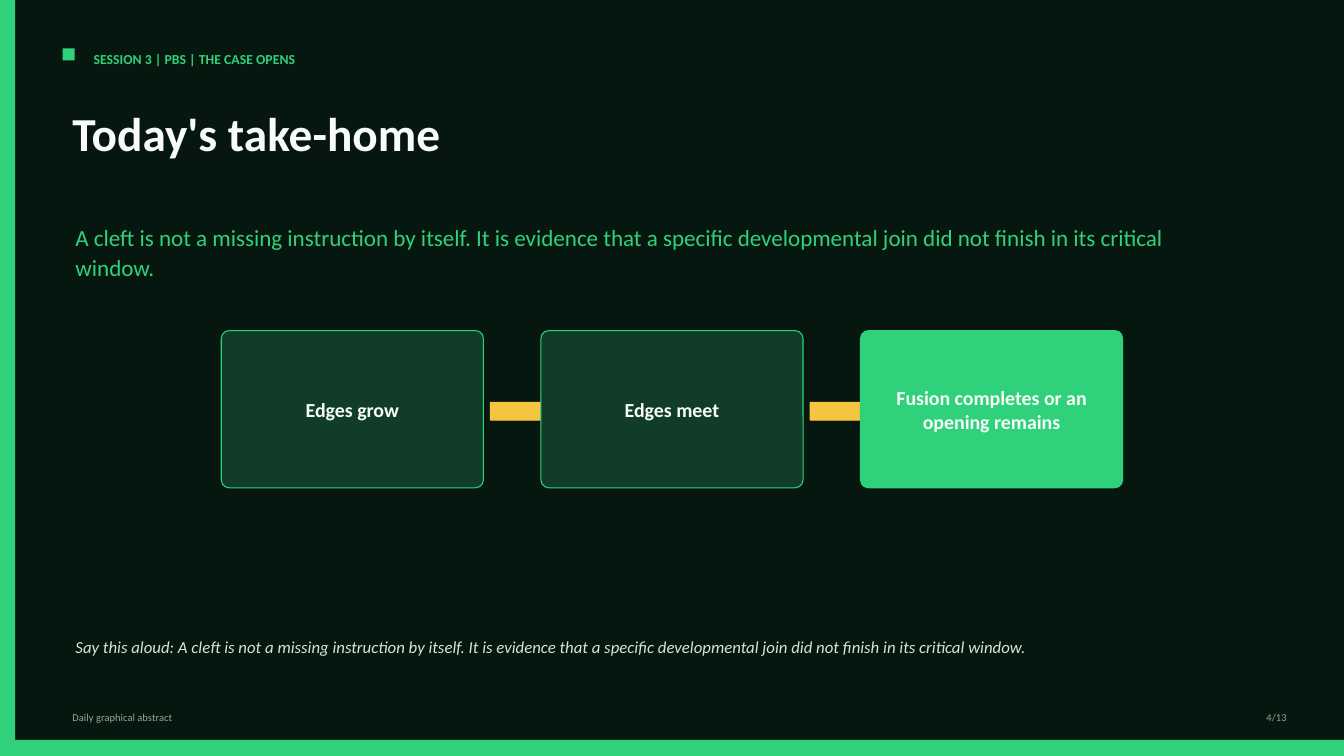
from dataclasses import dataclass

from pptx import Presentation
from pptx.dml.color import RGBColor
from pptx.enum.shapes import MSO_SHAPE as Shape
from pptx.enum.text import MSO_ANCHOR as Anchor, PP_ALIGN as Align
from pptx.util import Inches, Pt


@dataclass(frozen=True)
class Theme:
    """Colours, font and type sizes of the deck."""
    font: str = "Calibri"
    background: str = "06170F"
    accent: str = "2FD27A"
    card: str = "123C2A"
    arrow: str = "F5C542"
    bright: str = "F7FCF9"
    soft: str = "CDE9DA"
    muted: str = "87AB9A"
    title: float = 33.8
    lead: float = 16.5
    label: float = 14.2
    remark: float = 12
    kicker: float = 9.8
    footer: float = 7.5


class SlideBuilder:
    """Draws themed elements on one page."""

    def __init__(self, deck, theme):
        self.theme = theme
        self.page = deck.slides.add_slide(deck.slide_layouts[6])
        fill = self.page.background.fill
        fill.solid()
        fill.fore_color.rgb = RGBColor.from_string(theme.background)

    def set_text(self, frame, words, size, color, bold=False, italic=False,
                 align=Align.LEFT, spacing=None):
        """Put one styled paragraph into a text frame."""
        frame.word_wrap = True
        para = frame.paragraphs[0]
        para.text = words
        para.alignment = align
        if spacing:
            para.line_spacing = spacing
        font = para.font
        font.name, font.size = self.theme.font, Pt(size)
        font.bold, font.italic = bold, italic
        font.color.rgb = RGBColor.from_string(color)

    def text(self, left, top, width, height, words, size, color, **style):
        """Add a text box."""
        box = self.page.shapes.add_textbox(
            Inches(left), Inches(top), Inches(width), Inches(height))
        self.set_text(box.text_frame, words, size, color, **style)

    def shape(self, kind, left, top, width, height, fill, line=None):
        """Add a filled preset shape, outlined when a line colour is given."""
        shape = self.page.shapes.add_shape(
            kind, Inches(left), Inches(top), Inches(width), Inches(height))
        shape.shadow.inherit = False
        shape.fill.solid()
        shape.fill.fore_color.rgb = RGBColor.from_string(fill)
        if line:
            shape.line.color.rgb = RGBColor.from_string(line)
            shape.line.width = Pt(0.75)
        else:
            shape.line.fill.background()
        return shape

    def card(self, left, top, width, height, words, fill):
        """Add a rounded step card with a centred label."""
        card = self.shape(Shape.ROUNDED_RECTANGLE, left, top, width, height,
                          fill, self.theme.accent)
        card.adjustments[0] = 0.05
        frame = card.text_frame
        frame.margin_left = frame.margin_right = Inches(0.32)
        frame.vertical_anchor = Anchor.MIDDLE
        self.set_text(frame, words, self.theme.label, self.theme.bright,
                      bold=True, align=Align.CENTER)

    def flow(self, steps, slide_width):
        """Add a centred row of cards, each arrow tucked under the next card."""
        top, width, height, gap = 3.28, 2.6, 1.56, 0.57
        arrow_width, arrow_height = 0.68, 0.35
        row_width = len(steps) * width + (len(steps) - 1) * gap
        start = (slide_width - row_width) / 2
        for index, words in enumerate(steps):
            left = start + index * (width + gap)
            last = index == len(steps) - 1
            self.card(left, top, width, height, words,
                      self.theme.accent if last else self.theme.card)
            if not last:
                self.shape(Shape.RIGHT_ARROW, left + width + 0.07,
                           top + (height - arrow_height) / 2 + 0.02,
                           arrow_width, arrow_height,
                           self.theme.arrow, self.theme.arrow)


def main():
    """Build and save the deck."""
    width, height = 13.33, 7.5
    deck = Presentation()
    deck.slide_width, deck.slide_height = Inches(width), Inches(height)
    theme = Theme()
    slide = SlideBuilder(deck, theme)

    for bounds in ((0, 0, 0.15, height), (0, 7.34, width, 0.16),
                   (0.62, 0.48, 0.12, 0.12)):
        slide.shape(Shape.RECTANGLE, *bounds, theme.accent)

    slide.text(0.83, 0.45, 6.46, 0.25, "SESSION 3 | PBS | THE CASE OPENS",
               theme.kicker, theme.accent, bold=True)
    slide.text(0.62, 7, 9.38, 0.19, "Daily graphical abstract",
               theme.footer, theme.muted)
    slide.text(12.03, 7, 0.83, 0.19, "4/13", theme.footer, theme.muted,
               align=Align.RIGHT)
    slide.text(0.62, 1.04, 11.46, 0.88, "Today's take-home",
               theme.title, theme.bright, bold=True, spacing=0.92)

    message = ("A cleft is not a missing instruction by itself. It is evidence that "
               "a specific developmental join did not finish in its critical window.")
    slide.text(0.65, 2.14, 11.25, 0.6, message, theme.lead, theme.accent, spacing=1.1)
    slide.flow(["Edges grow", "Edges meet",
                "Fusion completes or an opening remains"], width)
    slide.text(0.65, 6.25, 11.25, 0.46, f"Say this aloud: {message}",
               theme.remark, theme.soft, italic=True, spacing=1.1)
    deck.save("out.pptx")


if __name__ == "__main__":
    main()
